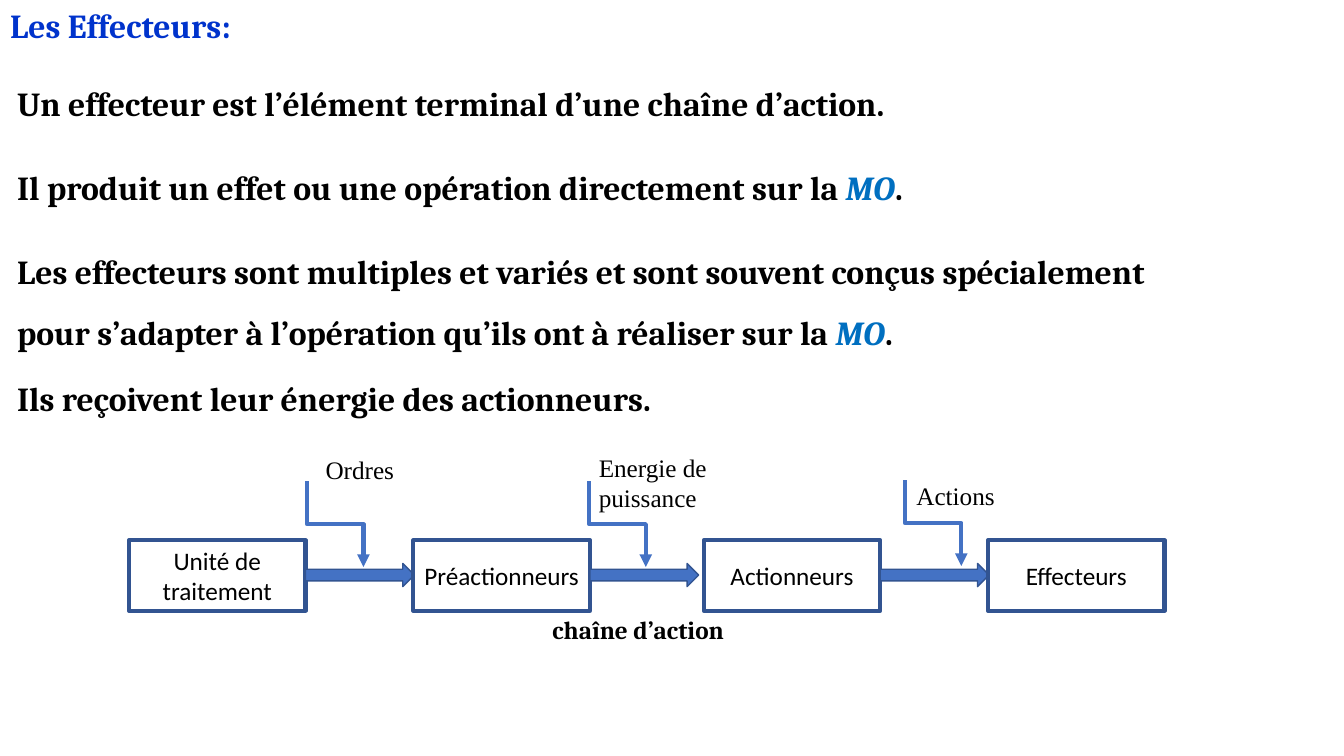
"""Build the slide on effectors and their action chain."""
from lxml.etree import SubElement
from pptx import Presentation
from pptx.dml.color import RGBColor
from pptx.enum.shapes import MSO_CONNECTOR, MSO_SHAPE
from pptx.enum.text import MSO_ANCHOR, MSO_AUTO_SIZE, PP_ALIGN
from pptx.oxml.ns import qn
from pptx.util import Pt

PX = 9144
THEME = {
    "title": "0033CC", "text": "000000", "accent": "006FC0",
    "arrow": "4472C4", "outline": "325491",
    "heading_size": 24, "label_size": 18,
    "heading_font": "Cambria", "box_font": "Calibri", "label_font": "Times New Roman",
}


def px(*lengths):
    return [length * PX for length in lengths]


def write_text(paragraph, text, font="heading_font", size="heading_size",
               color="text", bold=False, italic=False, align=PP_ALIGN.LEFT):
    paragraph.alignment = align
    run = paragraph.add_run()
    run.text = text
    run.font.name = THEME[font]
    run.font.size = Pt(THEME[size])
    run.font.color.rgb = RGBColor.from_string(THEME[color])
    run.font.bold = bold
    run.font.italic = italic


presentation = Presentation()
presentation.slide_width, presentation.slide_height = px(1333, 750)
slide = presentation.slides.add_slide(presentation.slide_layouts[1])
shapes = slide.shapes
title, body = shapes.title, slide.placeholders[1]

for placeholder, bounds in ((title, (0, 0, 256, 50)), (body, (7, 57, 1201, 354))):
    placeholder.left, placeholder.top, placeholder.width, placeholder.height = px(*bounds)
    placeholder.text_frame.auto_size = MSO_AUTO_SIZE.NONE
    placeholder.text_frame.vertical_anchor = MSO_ANCHOR.TOP
    placeholder.text_frame.word_wrap = True

write_text(title.text_frame.paragraphs[0], "Les Effecteurs:", color="title", bold=True)

STATEMENTS = [
    (0, ["Un effecteur est l’élément terminal d’une chaîne d’action."]),
    (17, ["Il produit un effet ou une opération directement sur la ", "MO", "."]),
    (17, ["Les effecteurs sont multiples et variés et sont souvent conçus spécialement "
          "pour s’adapter à l’opération qu’ils ont à réaliser sur la ", "MO", "."]),
    (4, ["Ils reçoivent leur énergie des actionneurs."]),
]
for index, (space, parts) in enumerate(STATEMENTS):
    frame = body.text_frame
    paragraph = frame.add_paragraph() if index else frame.paragraphs[0]
    paragraph.line_spacing = 1.5
    paragraph.space_before = Pt(space)
    paragraph.space_after = Pt(0)
    properties = paragraph._p.get_or_add_pPr()
    properties.set("marL", "0")
    properties.set("indent", "0")
    SubElement(properties, qn("a:buNone"))
    for part in parts:
        is_term = part == "MO"
        write_text(paragraph, part, color="accent" if is_term else "text",
                   bold=True, italic=is_term)

STAGES = [(128, "Unité de traitement"), (410, "Préactionneurs"),
          (698, "Actionneurs"), (980, "Effecteurs")]
STAGE_WIDTH = 175
for index, (left, name) in enumerate(STAGES):
    stage = shapes.add_shape(MSO_SHAPE.RECTANGLE, *px(left, 536, STAGE_WIDTH, 70))
    stage.fill.background()
    stage.line.width = Pt(3)
    stage.text_frame.word_wrap = True
    stage.text_frame.vertical_anchor = MSO_ANCHOR.MIDDLE
    write_text(stage.text_frame.paragraphs[0], name, font="box_font",
               size="label_size", align=PP_ALIGN.CENTER)
    chain_parts = [stage]
    if index < len(STAGES) - 1:
        arrow = shapes.add_shape(MSO_SHAPE.RIGHT_ARROW,
                                 *px(left + STAGE_WIDTH, 559, 108, 23))
        arrow.fill.solid()
        arrow.fill.fore_color.rgb = RGBColor.from_string(THEME["arrow"])
        arrow.line.width = Pt(1)
        chain_parts.append(arrow)
    for shape in chain_parts:
        shape.shadow.inherit = False
        shape.line.color.rgb = RGBColor.from_string(THEME["outline"])

DROP, SHIFT = 85, 56
TURN = (DROP - SHIFT) // 2
for left, top in ((304, 478), (584, 478), (897, 477)):
    connector = shapes.add_connector(
        MSO_CONNECTOR.ELBOW,
        *px(left - TURN + DROP, top + TURN, left - TURN, top + TURN + SHIFT))
    connector.line.width = Pt(3)
    connector.line.color.rgb = RGBColor.from_string(THEME["arrow"])
    connector_properties = connector._element.spPr
    connector_properties.find(qn("a:xfrm")).set("rot", "16200000")
    SubElement(connector.line._get_or_add_ln(), qn("a:tailEnd"), type="triangle")
    SubElement(connector_properties, qn("a:effectLst"))

LABELS = [
    ((313, 446, 135, 40), ["Ordres"], "label_font", False),
    ((584, 444, 135, 71), ["Energie de", "puissance"], "label_font", False),
    ((899, 472, 135, 40), ["Actions"], "label_font", False),
    ((538, 605, 202, 40), ["chaîne d’action"], "heading_font", True),
]
for bounds, lines, font, bold in LABELS:
    frame = shapes.add_textbox(*px(*bounds)).text_frame
    frame.word_wrap = True
    for index, line in enumerate(lines):
        paragraph = frame.add_paragraph() if index else frame.paragraphs[0]
        write_text(paragraph, line, font=font, size="label_size", bold=bold)

presentation.save("out.pptx")
